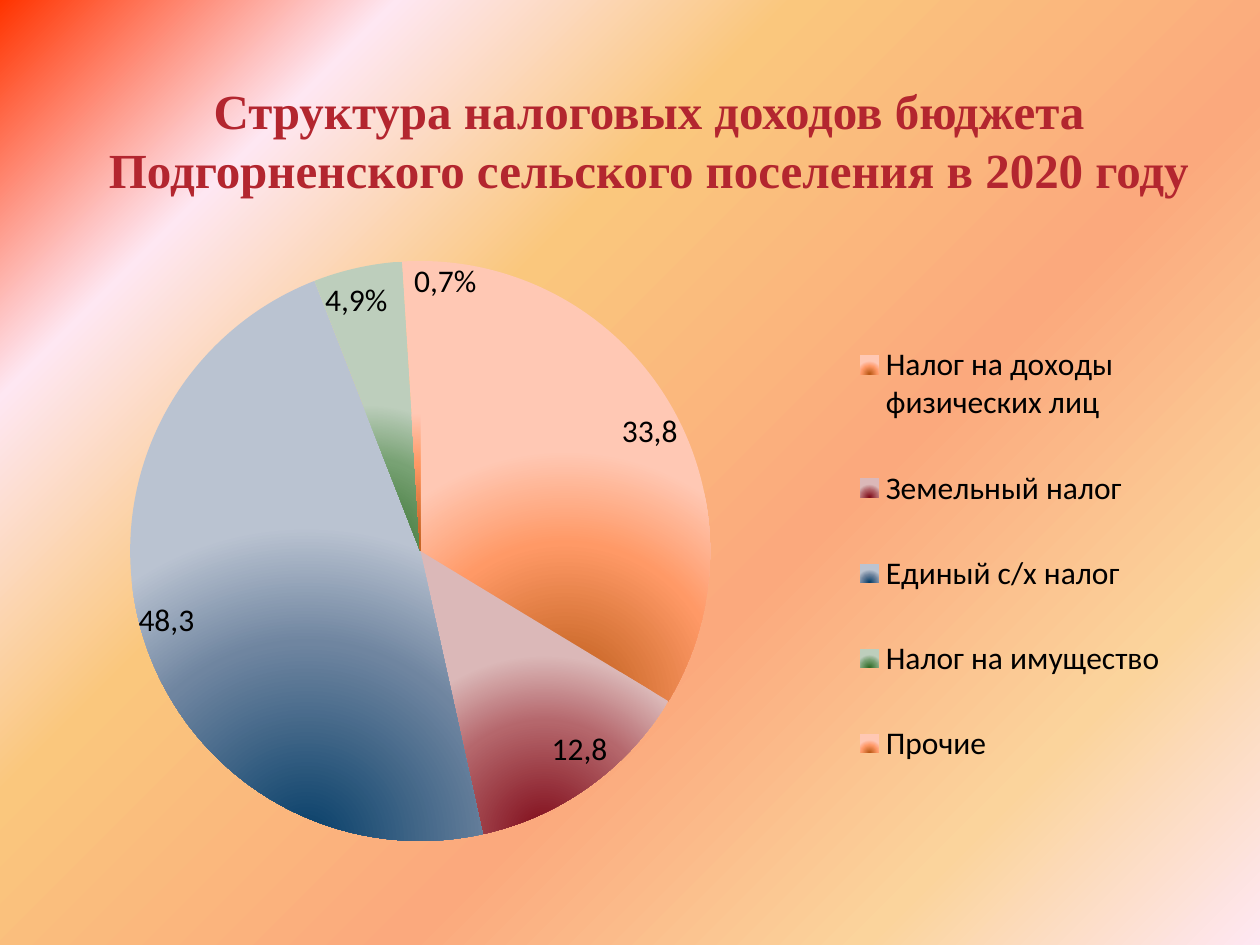
from lxml.etree import SubElement
from pptx import Presentation
from pptx.chart.data import CategoryChartData
from pptx.dml.color import RGBColor
from pptx.enum.chart import XL_CHART_TYPE as ChartType, XL_LABEL_POSITION as LabelPos, XL_LEGEND_POSITION as LegendPos
from pptx.enum.text import MSO_ANCHOR as Anchor, PP_ALIGN as Align
from pptx.oxml.ns import qn
from pptx.util import Inches, Pt

COLORS = {"title": "B3262F", "text": "000000"}
BACKDROP = [(0, "FF3300"), (18, "FEE7F2"), (36, "FAC77D"),
            (61, "FBA97D"), (82, "FBD49C"), (100, "FEE7F2")]
SHADES = {
    "orange": ("B85814", "FF9966", "FFC8B4"),
    "red": ("7F0A18", "B5676C", "DBB8B8"),
    "blue": ("063E68", "6F85A0", "BAC3D1"),
    "green": ("2E6A25", "78A274", "BDCEBC"),
}
TAXES = [
    ("Налог на доходы физических лиц", 34, "33,8", "orange", (0.01, 0)),
    ("Земельный налог", 13, "12,8", "red", (0.02, -0.02)),
    ("Единый с/х налог", 48, "48,3", "blue", (-0.01, 0.01)),
    ("Налог на имущество", 5, "4,9%", "green", (-0.03, 0.01)),
    ("Прочие", 1, "0,7%", "orange", (0.03, -0.01)),
]
HEADING = "Структура налоговых доходов бюджета Подгорненского сельского поселения в 2020 году"


def set_gradient(fill, holder, stops, angle=None):
    """Fill with colour stops, linear at an angle or round from the bottom centre."""
    fill.gradient()
    gradient = next(holder.iter(qn("a:gradFill")))
    for part in list(gradient):
        gradient.remove(part)
    stop_list = SubElement(gradient, qn("a:gsLst"))
    for position, color in stops:
        stop = SubElement(stop_list, qn("a:gs"), pos=str(position * 1000))
        SubElement(stop, qn("a:srgbClr"), val=color)
    if angle is not None:
        SubElement(gradient, qn("a:lin"), ang=str(angle * 60000), scaled="0")
    else:
        focus = SubElement(gradient, qn("a:path"), path="circle")
        SubElement(focus, qn("a:fillToRect"), l="50000", t="100000", r="50000", b="0")


def set_font(font, name, size, color, bold=False):
    """Set the face, size, colour and weight of a font."""
    font.name, font.size, font.bold = name, Pt(size), bold
    font.color.rgb = RGBColor.from_string(COLORS[color])


def set_layout(part, settings):
    """Give a chart part a manual layout in shares of the chart's size."""
    layout = part.find(qn("c:layout"))
    if layout is None:
        layout = part.makeelement(qn("c:layout"), {})
        part.insert(0 if part.tag == qn("c:plotArea") else 1, layout)
    manual = SubElement(layout, qn("c:manualLayout"))
    for tag, value in settings.items():
        SubElement(manual, qn(f"c:{tag}"), val=str(value))


def add_heading(slide, left, top, width, height):
    """Write the centred heading in the upper part of its box."""
    frame = slide.shapes.add_textbox(left, top, width, height).text_frame
    frame.word_wrap = True
    frame.vertical_anchor = Anchor.MIDDLE
    frame.margin_bottom = int(height * 0.38)
    heading = frame.paragraphs[0]
    heading.text = HEADING
    heading.alignment = Align.CENTER
    set_font(heading.font, "Times New Roman", 28, "title", bold=True)


def add_tax_pie(slide, left, top, width, height):
    """Draw the pie of tax shares with its legend."""
    data = CategoryChartData(number_format="0")
    data.categories = [tax[0] for tax in TAXES]
    data.add_series("Series 1", [tax[1] for tax in TAXES])
    chart = slide.shapes.add_chart(ChartType.PIE, left, top, width, height, data).chart
    chart.has_title = False
    set_font(chart.font, "Calibri", 18, "text")
    chart.has_legend = True
    chart.legend.position = LegendPos.RIGHT
    chart.legend.include_in_layout = False
    plot = chart.plots[0]
    plot.vary_by_categories = True
    root = chart.element
    for index, (_, _, caption, shade, (dx, dy)) in enumerate(TAXES):
        point = plot.series[0].points[index]
        dark, middle, light = SHADES[shade]
        fill = point.format.fill
        set_gradient(fill, root.findall(".//" + qn("c:dPt"))[index],
                     [(0, dark), (60, middle), (95, light), (100, light)])
        label = point.data_label
        label.text_frame.text = caption
        set_font(label.text_frame.paragraphs[0].font, "Calibri", 18, "text")
        label.position = LabelPos.INSIDE_END
        set_layout(root.findall(".//" + qn("c:dLbl"))[index], {"x": dx, "y": dy})
    edges = {"xMode": "edge", "yMode": "edge"}
    set_layout(root.find(".//" + qn("c:plotArea")),
               {"layoutTarget": "inner", **edges, "x": 0.04, "y": 0.07, "w": 0.55, "h": 0.93})
    set_layout(root.find(".//" + qn("c:legend")),
               {**edges, "x": 0.68, "y": 0.13, "w": 0.31, "h": 0.82})


def main():
    """Build and save the slide."""
    deck = Presentation()
    deck.slide_width, deck.slide_height = Inches(10), Inches(7.5)
    slide = deck.slides.add_slide(deck.slide_layouts[6])
    set_gradient(slide.background.fill, slide.element, BACKDROP, angle=45)

    def box(x, y, w, h):
        """Turn shares of the slide into lengths."""
        return [int(share * side) for share, side in
                zip((x, y, w, h), (deck.slide_width, deck.slide_height) * 2)]

    add_heading(slide, *box(0.07, 0.07, 0.89, 0.24))
    add_tax_pie(slide, *box(0.05, 0.23, 0.9, 0.66))
    deck.save("out.pptx")


if __name__ == "__main__":
    main()
